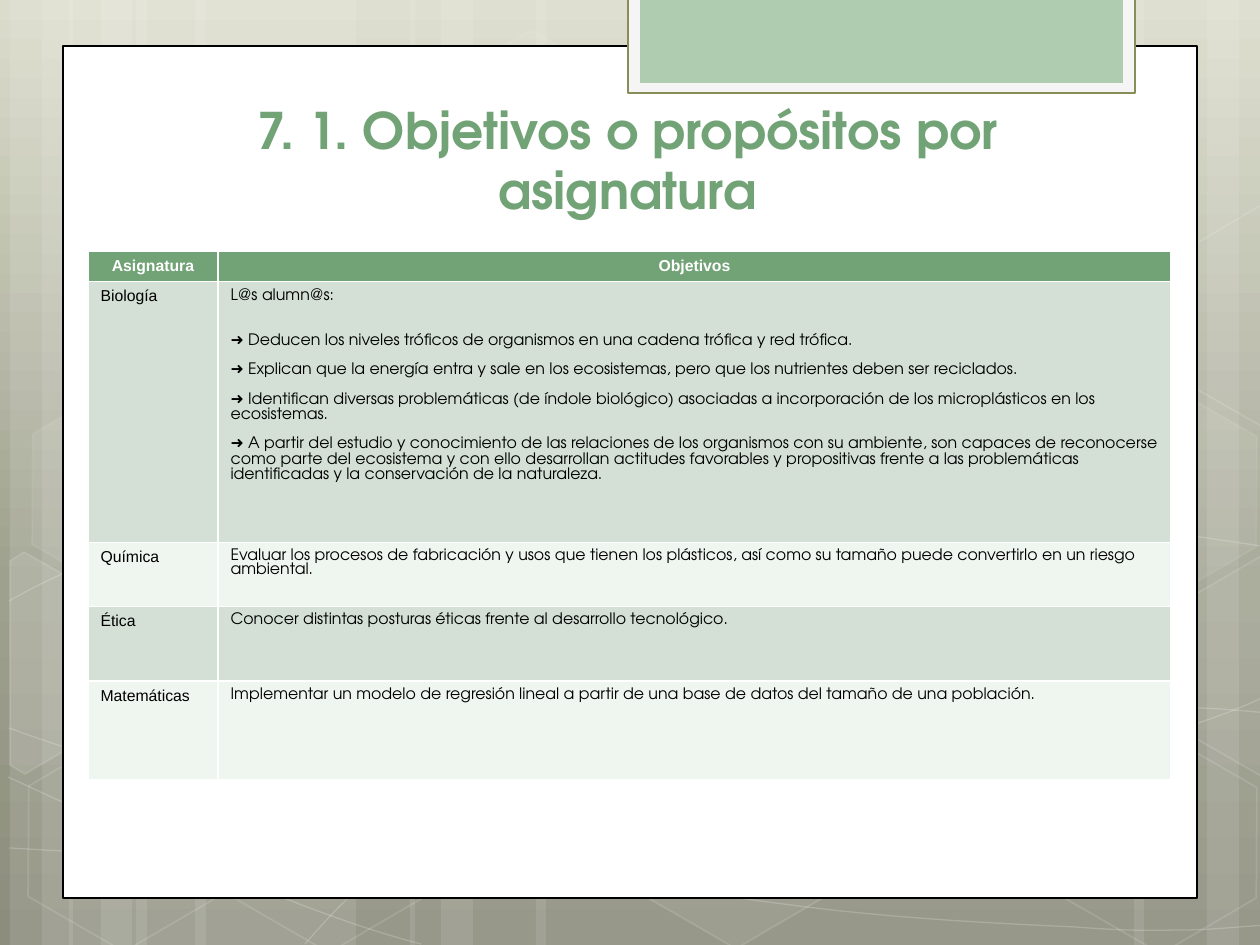
import copy

import pptx
import pptx.dml.color
import pptx.enum.shapes
import pptx.enum.text
import pptx.oxml
import pptx.oxml.ns
import pptx.util

SCALE = 914400 / 126
COLORS = {
    "white": "FFFFFF", "black": "000000", "green": "72A376", "pale_green": "B0CCB0",
    "off_white": "F5F5F5", "olive": "898E56", "dark_row": "D4E0D5", "light_row": "EFF5EF",
    "sky": "DBDCCB", "mid": "9FA18F", "ground": "8C8D7C",
}
HEADING_FONT, LABEL_FONT = "TeX Gyre Adventor", "Arial"
RECTANGLE = pptx.enum.shapes.MSO_SHAPE.RECTANGLE
HEXAGON = pptx.enum.shapes.MSO_SHAPE.HEXAGON
CENTER = pptx.enum.text.PP_ALIGN.CENTER

STRIPES = [(136, 220), (10, 63), (42, 105), (195, 220), (69, 63), (101, 105),
           (924, 220), (1207, 63), (1134, 105), (536, 388), (410, 63), (441, 105)]
WAVES = [
    [(9, 848), (77, 852), (145, 856), (239, 854), (334, 853), (451, 850), (577, 838),
     (703, 825), (882, 801), (998, 777), (1113, 753), (1231, 716), (1269, 694)],
    [(9, 601), (45, 581), (82, 562), (152, 543), (224, 524), (326, 496), (437, 488),
     (549, 479), (685, 478), (824, 488), (963, 498), (1193, 537), (1269, 547)],
    [(8, 777), (160, 847), (311, 916), (421, 944)],
    [(9, 728), (48, 742), (88, 756), (161, 776), (234, 795), (344, 827), (450, 848),
     (554, 869), (687, 892), (791, 905), (896, 919), (1008, 924), (1075, 927),
     (1140, 932), (1158, 930), (1191, 930), (1223, 929), (1246, 926), (1269, 925)],
    [(305, 944), (328, 918), (350, 893), (381, 871), (411, 848), (454, 823), (489, 805),
     (524, 788), (546, 780), (592, 767), (638, 754), (722, 737), (766, 728),
     (811, 719), (818, 719), (857, 717), (896, 713), (958, 709), (1000, 708),
     (1045, 707), (1116, 708), (1116, 708), (1144, 708), (1173, 708), (1201, 708),
     (1223, 709), (1245, 711), (1268, 713)],
]
HEXAGONS = [(421, 45, 4, 8), (626, 742, 6, 12), (14, 745, 0, 12), (18, 393, 7, 8),
            (219, 746, 0, 12), (949, 571, 10, 12), (1051, 747, 0, 12), (1051, 396, 7, 8)]
CUT_HEXAGONS = [
    ([(10, 561), (24, 552), (121, 607), (120, 718), (25, 774), (10, 765)], 10),
    ([(1167, 611), (1261, 556), (1271, 562), (1271, 772), (1263, 777), (1167, 722)], 4),
    ([(1167, 261), (1261, 205), (1273, 212), (1271, 422), (1263, 427), (1167, 372)], 0),
]
ROWS = [
    ("Asignatura", ["Objetivos"], 29),
    ("Biología", [
        "L@s alumn@s:",
        "\n➜ Deducen los niveles tróficos de organismos en una cadena trófica y red trófica.",
        "➜ Explican que la energía entra y sale en los ecosistemas, pero que los nutrientes deben ser reciclados.",
        "➜ Identifican diversas problemáticas (de índole biológico) asociadas a incorporación de los "
        "microplásticos en los ecosistemas.",
        "➜ A partir del estudio y conocimiento de las relaciones de los organismos con su ambiente, son "
        "capaces de reconocerse como parte del ecosistema y con ello desarrollan actitudes favorables y "
        "propositivas frente a las problemáticas identificadas y la conservación de la naturaleza.",
    ], 261),
    ("Química", ["Evaluar los procesos de fabricación y usos que tienen los plásticos, así como su tamaño "
                 "puede convertirlo en un riesgo ambiental."], 64),
    ("Ética", ["Conocer distintas posturas éticas frente al desarrollo tecnológico."], 75),
    ("Matemáticas", ["Implementar un modelo de regresión lineal a partir de una base de datos del "
                     "tamaño de una población."], 99),
]


def px(*lengths):
    return [round(length * SCALE) for length in lengths]


def rgb(name):
    return pptx.dml.color.RGBColor.from_string(COLORS[name])


def set_alpha(fill_format, percent):
    color = fill_format._xPr.find(".//" + pptx.oxml.ns.qn("a:srgbClr"))
    alpha = pptx.oxml.parse_xml(f'<a:alpha {pptx.oxml.ns.nsdecls("a")} val="{percent * 1000}"/>')
    color.append(alpha)


def style(shape, fill=None, line=None, width=1, fill_alpha=100, line_alpha=100):
    shape.shadow.inherit = False
    for paint, color, percent in ((shape.fill, fill, fill_alpha), (shape.line.fill, line, line_alpha)):
        if color and percent:
            paint.solid()
            paint.fore_color.rgb = rgb(color)
            if percent < 100:
                set_alpha(paint, percent)
        else:
            paint.background()
    if line:
        shape.line.width = pptx.util.Pt(width)


def add_block(slide, box, **look):
    block = slide.shapes.add_shape(RECTANGLE, *px(*box))
    style(block, **look)


def add_outline(slide, points, closed, **look):
    builder = slide.shapes.build_freeform(*points[0], scale=SCALE)
    builder.add_line_segments(points[1:], close=closed)
    outline = builder.convert_to_shape()
    style(outline, **look)
    return outline


def bend(outline):
    segments = outline._element.findall(".//" + pptx.oxml.ns.qn("a:lnTo"))
    for first in range(0, len(segments), 3):
        curve = pptx.oxml.parse_xml(f'<a:cubicBezTo {pptx.oxml.ns.nsdecls("a")}/>')
        segments[first].addprevious(curve)
        for segment in segments[first:first + 3]:
            curve.append(segment[0])
            segment.getparent().remove(segment)


def add_backdrop(slide, box):
    left, top, _, height = box
    fill = slide.background.fill
    fill.gradient()
    fill.gradient_angle = 270
    stops = slide._element.find(".//" + pptx.oxml.ns.qn("a:gsLst"))
    stops.append(copy.deepcopy(stops[0]))
    for stop, color, position in zip(fill.gradient_stops, ("sky", "mid", "ground"), (0, 0.62, 1)):
        stop.color.rgb = rgb(color)
        stop.position = position
    for x, width in STRIPES:
        add_block(slide, (left + x, top, width, height), fill="white", fill_alpha=10)
    for wave in WAVES:
        points = [(left + x, top + y) for x, y in wave]
        bend(add_outline(slide, points, False, line="white", width=0.75, line_alpha=20))
    for x, y, fill_alpha, line_alpha in HEXAGONS:
        hexagon = slide.shapes.add_shape(HEXAGON, *px(left + x, top + y, 220, 192))
        hexagon.adjustments[0] = 0.285
        hexagon.rotation = 30
        style(hexagon, fill="white", line="white", fill_alpha=fill_alpha, line_alpha=line_alpha)
    for corners, fill_alpha in CUT_HEXAGONS:
        points = [(left + x, top + y) for x, y in corners]
        add_outline(slide, points, True, fill="white", line="white", fill_alpha=fill_alpha, line_alpha=12)


def add_tab(slide, box):
    left, top, width, height = box
    add_block(slide, box, fill="off_white", line="olive", width=1.25)
    add_block(slide, (left + 12, top, width - 24, height - 10), fill="pale_green")


def format_runs(paragraph, font_name, size, color, bold):
    for run in paragraph.runs:
        run.font.name = font_name
        run.font.size = pptx.util.Pt(size)
        run.font.bold = bold
        run.font.color.rgb = rgb(color)
    for line_break in paragraph._p.findall(pptx.oxml.ns.qn("a:br")):
        line_break.append(copy.deepcopy(paragraph.runs[0]._r.rPr))


def add_title(slide, box):
    title = slide.shapes.title
    title.left, title.top, title.width, title.height = px(*box)
    slide.shapes._spTree.append(title._element)
    frame = title.text_frame
    frame.text = "7. 1. Objetivos o propósitos por asignatura"
    frame.word_wrap = True
    frame.auto_size = pptx.enum.text.MSO_AUTO_SIZE.NONE
    frame.vertical_anchor = pptx.enum.text.MSO_ANCHOR.BOTTOM
    frame.paragraphs[0].alignment = CENTER
    format_runs(frame.paragraphs[0], HEADING_FONT, 28.8, "green", True)


def fill_cell(cell, paragraphs, row, column):
    header = row == 0
    cell.fill.solid()
    cell.fill.fore_color.rgb = rgb("green" if header else "dark_row" if row % 2 else "light_row")
    cell.text_frame.text = paragraphs[0]
    for text in paragraphs[1:]:
        cell.text_frame.add_paragraph().text = text
    font_name = HEADING_FONT if column == 1 and not header else LABEL_FONT
    for paragraph in cell.text_frame.paragraphs:
        if header:
            paragraph.alignment = CENTER
        if len(paragraphs) > 1:
            paragraph.line_spacing = 1.07
            paragraph.space_after = pptx.util.Pt(8)
        format_runs(paragraph, font_name, 9, "white" if header else "black", header)


def add_objectives(slide, box):
    table = slide.shapes.add_table(len(ROWS), 2, *px(*box)).table
    subject_width = 130
    table.columns[0].width, table.columns[1].width = px(subject_width, box[2] - subject_width)
    for row, (subject, objectives, height) in enumerate(ROWS):
        table.rows[row].height = px(height)[0]
        fill_cell(table.cell(row, 0), [subject], row, 0)
        fill_cell(table.cell(row, 1), objectives, row, 1)


def main():
    presentation = pptx.Presentation()
    presentation.slide_width, presentation.slide_height = px(1260, 945)
    slide = presentation.slides.add_slide(presentation.slide_layouts[5])
    add_backdrop(slide, (0, 0, 1260, 945))
    add_block(slide, (63, 46, 1134, 852), fill="white", line="black", width=0.75)
    add_tab(slide, (628, -3, 507, 96))
    add_title(slide, (144, 142, 967, 84))
    add_objectives(slide, (88, 251, 1083, 528))
    presentation.save("out.pptx")


if __name__ == "__main__":
    main()
